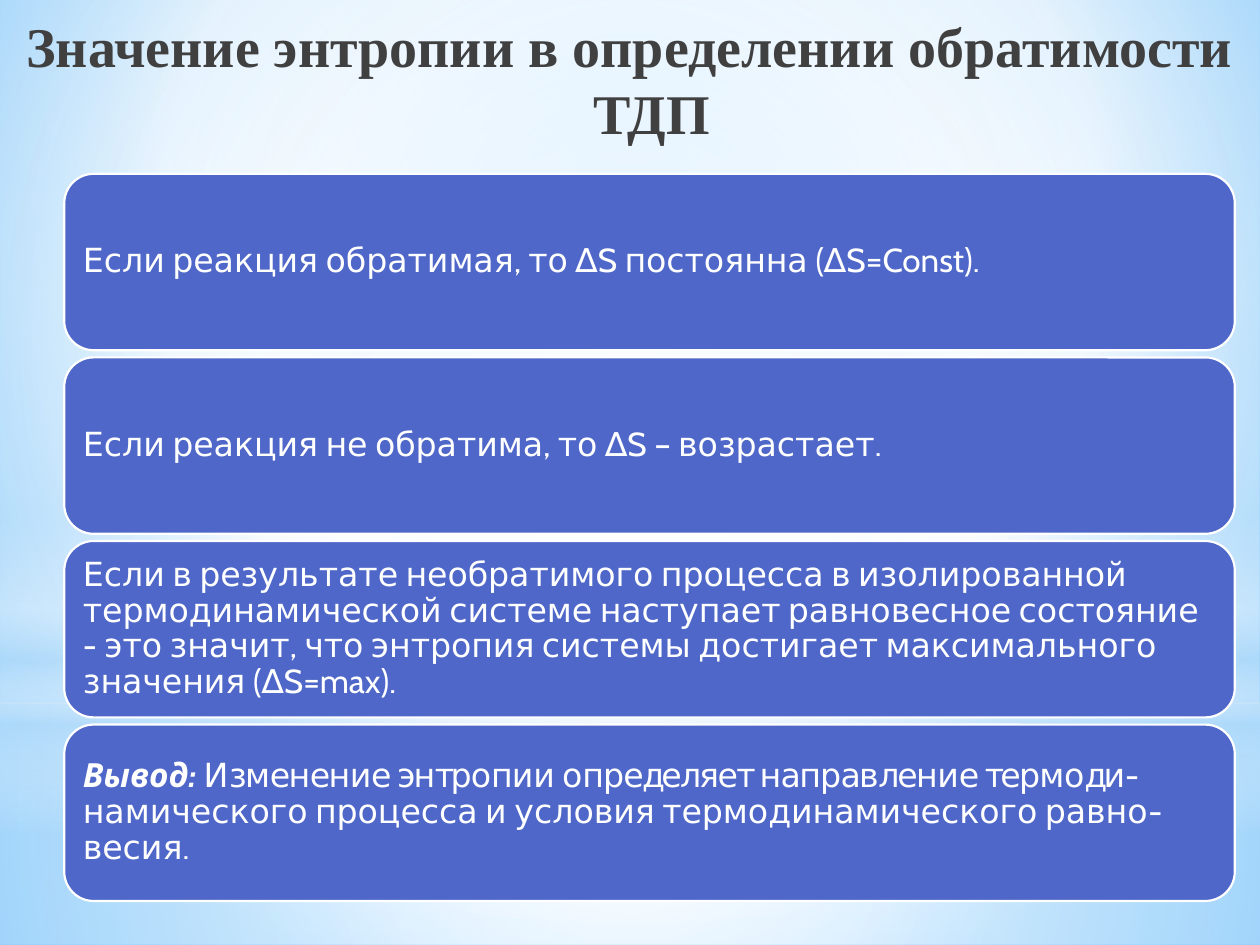
from pptx import Presentation
from pptx import util as u
from pptx.dml.color import RGBColor
from pptx.enum import shapes, text
from pptx.oxml import parse_xml
from pptx.oxml.ns import nsdecls, qn

WHITE = RGBColor(0xFF, 0xFF, 0xFF)
BLUE = RGBColor(0x4E, 0x67, 0xC8)
SKY = RGBColor(0xB4, 0xDC, 0xFA)
LIGHT_SKY = RGBColor(0x9E, 0xD5, 0xFF)
DEEP_SKY = RGBColor(0x5B, 0xB9, 0xFF)
GRAY = RGBColor(0x40, 0x40, 0x40)

TITLE = "Значение энтропии в определении обратимости ТДП"
STATEMENTS = [
    ["Если реакция обратимая, то ∆S постоянна (∆S=Const)."],
    ["Если реакция не обратима, то ∆S – возрастает."],
    ["Если в результате необратимого процесса в изолированной "
     "термодинамической системе наступает равновесное состояние - это значит, "
     "что энтропия системы достигает максимального значения (∆S=max)."],
    ["Вывод: ",
     "Изменение энтропии определяет направление термоди-намического процесса "
     "и условия термодинамического равно-весия."],
]

CENTER = (50, 50, 50, 50)
RECT = shapes.MSO_SHAPE.RECTANGLE
OVAL = shapes.MSO_SHAPE.OVAL
GLOWS = [
    (RECT, 5.58, 1.92, [(0, WHITE, 91), (37, WHITE, 76), (100, SKY, 79)], CENTER),
    (RECT, 0, 5.58, [(0, WHITE, 89), (48, WHITE, 62), (100, SKY, 79)], CENTER),
    (RECT, 4.12, 2.5, [(0, WHITE, 0), (29, WHITE, 30), (45, SKY, 40),
                       (55, WHITE, 26), (65, SKY, 60), (100, WHITE, 0)], None),
    (OVAL, 1.75, 5.58, [(0, WHITE, 100), (56, WHITE, 0)], CENTER),
]


def set_gradient(fill, element, stops, focus):
    fill.solid()
    fill.fore_color.rgb = WHITE
    stop_xml = "".join(
        f'<a:gs pos="{pos * 1000}"><a:srgbClr val="{color}">'
        f'<a:alpha val="{alpha * 1000}"/></a:srgbClr></a:gs>'
        for pos, color, alpha in stops)
    if focus:
        edges = " ".join(f'{side}="{v * 1000}"' for side, v in zip("ltrb", focus))
        shade = f'<a:path path="circle"><a:fillToRect {edges}/></a:path>'
    else:
        shade = '<a:lin ang="5400000" scaled="0"/>'
    grad = parse_xml(f'<a:gradFill {nsdecls("a")} rotWithShape="1">'
                     f'<a:gsLst>{stop_xml}</a:gsLst>{shade}</a:gradFill>')
    solid = element.find(".//" + qn("a:solidFill"))
    solid.getparent().replace(solid, grad)


def add_glow(s, kind, top, height, stops, focus):
    sp = s.shapes.add_shape(kind, 0, u.Inches(top), u.Inches(10), u.Inches(height))
    sp.shadow.inherit = False
    sp.line.fill.background()
    set_gradient(sp.fill, sp.element, stops, focus)


def add_title(s):
    sp = s.shapes.add_textbox(0, 0, u.Inches(10), u.Inches(1.25))
    tf = sp.text_frame
    tf.word_wrap = True
    tf.vertical_anchor = text.MSO_ANCHOR.MIDDLE
    p = tf.paragraphs[0]
    p.text = TITLE
    p.alignment = text.PP_ALIGN.CENTER
    pPr = p._p.get_or_add_pPr()
    pPr.set("marL", str(u.Inches(0.35)))
    pPr.set("indent", str(u.Inches(-0.35)))
    font = p.runs[0].font
    font.name, font.size, font.bold = "Times New Roman", u.Pt(32), True
    font.color.rgb = GRAY


def add_statement(s, top, parts):
    sp = s.shapes.add_shape(shapes.MSO_SHAPE.ROUNDED_RECTANGLE, u.Inches(0.51),
                            u.Inches(top), u.Inches(9.29), u.Inches(1.4))
    sp.shadow.inherit = False
    sp.fill.solid()
    sp.fill.fore_color.rgb = BLUE
    sp.line.color.rgb = WHITE
    sp.line.width = u.Pt(1.25)
    tf = sp.text_frame
    tf.word_wrap = True
    tf.vertical_anchor = text.MSO_ANCHOR.MIDDLE
    tf.margin_left = tf.margin_right = u.Inches(0.08)
    tf.margin_top = tf.margin_bottom = u.Inches(0.08)
    p = tf.paragraphs[0]
    p.alignment = text.PP_ALIGN.LEFT
    p.line_spacing = 0.9
    for part in parts:
        r = p.add_run()
        r.text = part
        r.font.name, r.font.size = "Cabin", u.Pt(19)
        r.font.color.rgb = WHITE
        r.font.bold = r.font.italic = part is not parts[-1]


def main():
    prs = Presentation()
    prs.slide_width, prs.slide_height = u.Inches(10), u.Inches(7.5)
    s = prs.slides.add_slide(prs.slide_layouts[6])
    set_gradient(s.background.fill, s.element,
                 [(0, LIGHT_SKY, 100), (60, WHITE, 100), (100, DEEP_SKY, 100)],
                 (20, 10, 20, 60))
    for glow in GLOWS:
        add_glow(s, *glow)
    add_title(s)
    for i, parts in enumerate(STATEMENTS):
        add_statement(s, 1.38 + 1.457 * i, parts)
    prs.save("out.pptx")


if __name__ == "__main__":
    main()
